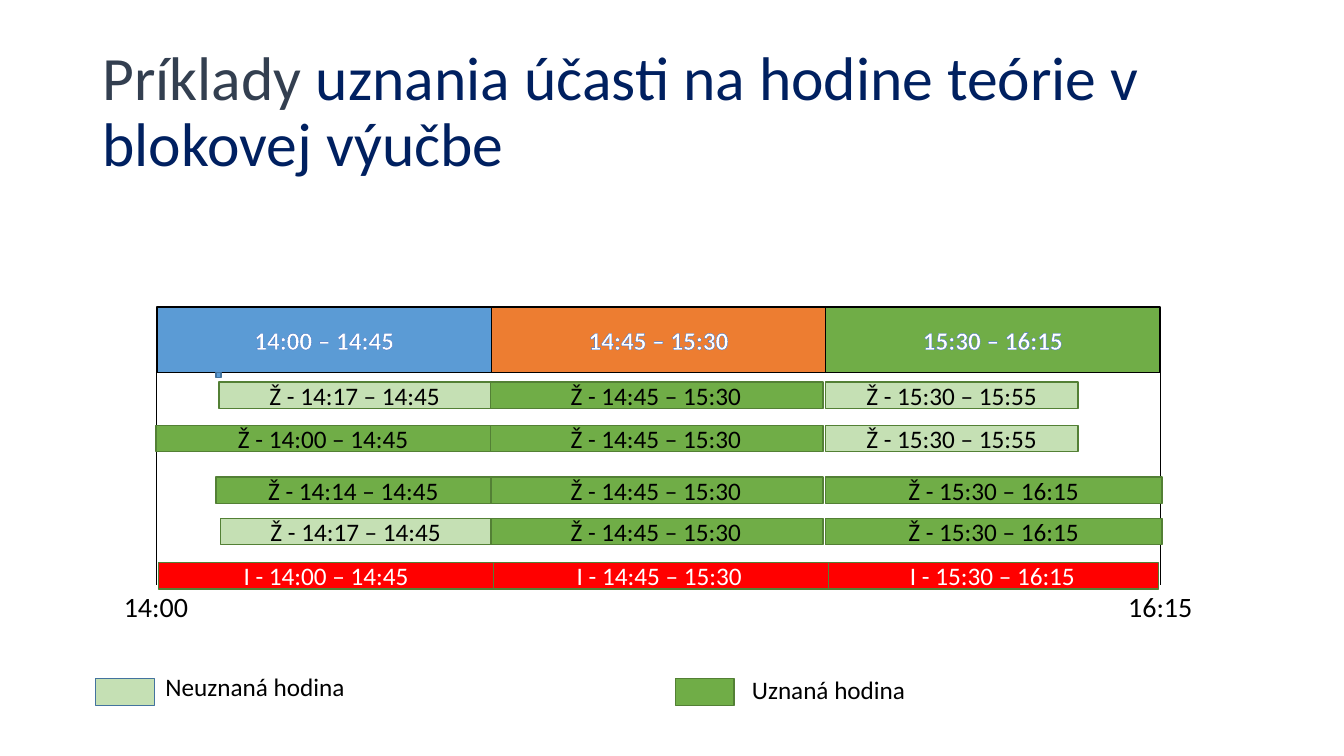
import pptx
import pptx.util
import pptx.dml.color
import pptx.enum.shapes
import pptx.enum.text
import pptx.oxml
import pptx.oxml.ns

Pt = pptx.util.Pt
BLUE, ORANGE, GREEN = "5B9BD5", "ED7D31", "70AD47"
PALE, RED, BLACK, WHITE = "C5E0B4", "FF0000", "000000", "FFFFFF"
GREEN_EDGE, BLUE_EDGE = "538035", "43739E"


def rgb(color):
    return pptx.dml.color.RGBColor.from_string(color)


def add_text(p, text, size=18, color=BLACK, bold=False, outline=None):
    r = p.add_run()
    r.text = text
    r.font.name = "Calibri"
    r.font.size = Pt(size)
    r.font.bold = bold
    r.font.color.rgb = rgb(color)
    if outline:
        ln = pptx.oxml.parse_xml(
            f'<a:ln {pptx.oxml.ns.nsdecls("a")} w="{Pt(0.8)}"><a:solidFill>'
            f'<a:srgbClr val="{outline}"/></a:solidFill></a:ln>')
        r._r.get_or_add_rPr().insert(0, ln)


def add_box(s, x, y, w, h, fill, edge=GREEN_EDGE, text="", **fmt):
    sp = s.shapes.add_shape(pptx.enum.shapes.MSO_SHAPE.RECTANGLE,
                            Pt(x), Pt(y), Pt(w), Pt(h))
    sp.shadow.inherit = False
    sp.fill.solid()
    sp.fill.fore_color.rgb = rgb(fill)
    sp.line.color.rgb = rgb(edge)
    sp.line.width = Pt(1)
    if text:
        tf = sp.text_frame
        tf.vertical_anchor = pptx.enum.text.MSO_ANCHOR.MIDDLE
        p = tf.paragraphs[0]
        p.alignment = pptx.enum.text.PP_ALIGN.CENTER
        add_text(p, text, **fmt)


def add_label(s, x, y, w, h, text, **fmt):
    tf = s.shapes.add_textbox(Pt(x), Pt(y), Pt(w), Pt(h)).text_frame
    tf.word_wrap = False
    tf.auto_size = pptx.enum.text.MSO_AUTO_SIZE.SHAPE_TO_FIT_TEXT
    p = tf.paragraphs[0]
    p.alignment = pptx.enum.text.PP_ALIGN.CENTER
    add_text(p, text, **fmt)


def add_title(s, x, y, w, h):
    sp = s.shapes.title
    sp.left, sp.top, sp.width, sp.height = Pt(x), Pt(y), Pt(w), Pt(h)
    sp.text_frame.vertical_anchor = pptx.enum.text.MSO_ANCHOR.MIDDLE
    sp.text_frame.word_wrap = True
    p = sp.text_frame.paragraphs[0]
    p.alignment = pptx.enum.text.PP_ALIGN.LEFT
    p.line_spacing = 0.9
    add_text(p, "Príklady ", size=44, color="333F50")
    add_text(p, "uznania účasti na hodine teórie v blokovej výučbe",
             size=44, color="002060")


def add_header(s, x, y, w, h):
    hours = [("14:00 – 14:45", BLUE), ("14:45 – 15:30", ORANGE),
             ("15:30 – 16:15", GREEN)]
    col = w / len(hours)
    for i, (text, fill) in enumerate(hours):
        add_box(s, x + i * col, y, col, h, fill, BLACK, text,
                color=WHITE, bold=True, outline="4472C4")


def add_axis(s, x, y, w, h):
    for edge, time in ((x, "14:00"), (x + w, "16:15")):
        c = s.shapes.add_connector(pptx.enum.shapes.MSO_CONNECTOR.STRAIGHT,
                                   Pt(edge), Pt(y), Pt(edge), Pt(y + h))
        c.line.color.rgb = rgb(BLACK)
        c.line.width = Pt(0.5)
        c._element.spPr.append(pptx.oxml.parse_xml(
            f'<a:effectLst {pptx.oxml.ns.nsdecls("a")}/>'))
        add_label(s, edge - 30.6, y + h, 61.2, 31.5, time, size=20)


def add_attendance(s, x, y):
    middle = (237.6, 239, "Ž - 14:45 – 15:30", GREEN)
    full_end = (478.1, 240.5, "Ž - 15:30 – 16:15", GREEN)
    early_end = (478.1, 180.5, "Ž - 15:30 – 15:55", PALE)
    rows = [
        (7, [early_end, middle, (45, 194, "Ž - 14:17 – 14:45", PALE)]),
        (38, [early_end, middle, (0, 239, "Ž - 14:00 – 14:45", GREEN)]),
        (74.8, [full_end, middle, (42.8, 196.5, "Ž - 14:14 – 14:45", GREEN)]),
        (104.3, [full_end, middle, (46.2, 193, "Ž - 14:17 – 14:45", PALE)]),
        (136, [(479, 237, "I - 15:30 – 16:15", RED),
               (238.5, 242, "I - 14:45 – 15:30", RED),
               (2, 239, "I - 14:00 – 14:45", RED)]),
    ]
    add_box(s, x + 42.8, y, 3.6, 3.6, BLUE, BLUE_EDGE)
    for top, bars in rows:
        for left, w, text, fill in bars:
            add_box(s, x + left, y + top, w, 18.7, fill, text=text,
                    color=WHITE if fill == RED else BLACK)


def add_legend(s, x, y):
    add_box(s, x, y, 41.8, 19.2, PALE, BLUE_EDGE)
    add_box(s, x + 414, y, 41.8, 19.2, GREEN)
    add_label(s, x + 41.8, y - 8.6, 144, 29, "Neuznaná hodina")
    add_label(s, x + 460.8, y - 6.5, 125.3, 29, "Uznaná hodina")


def main():
    prs = pptx.Presentation()
    prs.slide_width, prs.slide_height = Pt(960), Pt(540)
    s = prs.slides.add_slide(prs.slide_layouts[5])
    add_title(s, 66, 28.8, 828, 104.4)
    add_header(s, 112.2, 219.4, 716.4, 46.6)
    add_axis(s, 111.4, 266, 717.4, 151.6)
    add_attendance(s, 111.4, 266)
    add_legend(s, 68.4, 484.6)
    prs.save("out.pptx")


if __name__ == "__main__":
    main()
